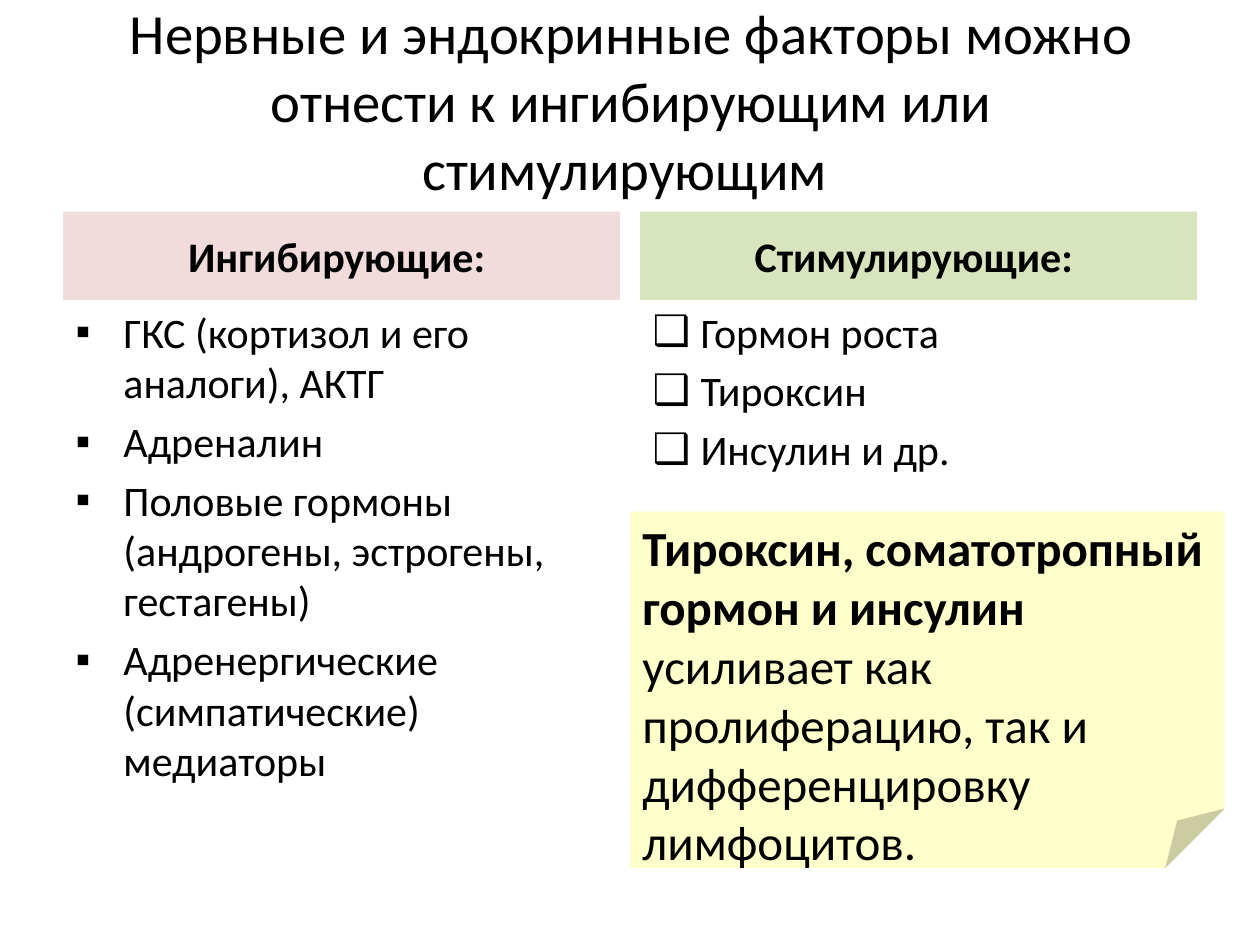
from dataclasses import dataclass

from lxml import etree
from pptx import Presentation
from pptx.dml.color import RGBColor
from pptx.enum.shapes import MSO_SHAPE
from pptx.enum.text import MSO_ANCHOR, MSO_AUTO_SIZE, PP_ALIGN
from pptx.oxml.ns import qn
from pptx.util import Inches, Pt

FOLDED_CORNER = MSO_SHAPE.FOLDED_CORNER
TOP, MIDDLE = MSO_ANCHOR.TOP, MSO_ANCHOR.MIDDLE
LEFT, CENTER = PP_ALIGN.LEFT, PP_ALIGN.CENTER
NO_FIT = MSO_AUTO_SIZE.NONE
COMPARISON_LAYOUT = 4


@dataclass(frozen=True)
class Theme:
    font: str = "Calibri"
    text: str = "000000"
    inhibiting: str = "F2DCDB"
    stimulating: str = "D7E4BD"
    note: str = "FFFFCC"
    title_size: float = 32.4
    body_size: float = 24
    note_size: float = 28


@dataclass(frozen=True)
class Column:
    left: float
    header_idx: int
    list_idx: int
    fill: str
    heading: str
    bullet: str
    items: tuple[str, ...]


THEME = Theme()
COLUMN_WIDTH, INDENT = 4.42, 0.38
HEADER_TOP, HEADER_HEIGHT, LIST_HEIGHT = 1.68, 0.7, 4.32
COLUMNS = (
    Column(0.5, 1, 2, THEME.inhibiting, "Ингибирующие: ", "▪", (
        "ГКС (кортизол и его аналоги), АКТГ",
        "Адреналин",
        "Половые гормоны (андрогены, эстрогены, гестагены)",
        "Адренергические (симпатические) медиаторы",
    )),
    Column(5.08, 3, 4, THEME.stimulating, "Стимулирующие: ", "❑", (
        "Гормон роста",
        "Тироксин",
        "Инсулин и др.",
    )),
)


def place(s, left: float, top: float, width: float, height: float) -> None:
    s.left, s.top = Inches(left), Inches(top)
    s.width, s.height = Inches(width), Inches(height)


def set_fill(s, color: str) -> None:
    s.fill.solid()
    s.fill.fore_color.rgb = RGBColor.from_string(color)


def setup_frame(s, anchor):
    tf = s.text_frame
    tf.word_wrap = True
    tf.auto_size = NO_FIT
    tf.vertical_anchor = anchor
    return tf


def add_text(p, text: str, *, size: float, bold: bool = False, align=LEFT) -> None:
    p.alignment = align
    r = p.add_run()
    r.text = text
    r.font.name = THEME.font
    r.font.size = Pt(size)
    r.font.bold = bold
    r.font.color.rgb = RGBColor.from_string(THEME.text)


def set_bullet(p, char: str) -> None:
    props = p._p.get_or_add_pPr()
    props.set("marL", str(Inches(INDENT)))
    props.set("indent", str(-Inches(INDENT)))
    etree.SubElement(props, qn("a:buChar")).set("char", char)


def draw_title(slide) -> None:
    s = slide.shapes.title
    place(s, 0.51, 0.44, 9, 1.25)
    tf = setup_frame(s, MIDDLE)
    tf.margin_bottom = Inches(0.59)
    add_text(tf.paragraphs[0],
             "Нервные и эндокринные факторы можно отнести к "
             "ингибирующим или стимулирующим ",
             size=THEME.title_size, align=CENTER)


def draw_column(slide, column: Column) -> None:
    header = slide.placeholders[column.header_idx]
    place(header, column.left, HEADER_TOP, COLUMN_WIDTH, HEADER_HEIGHT)
    set_fill(header, column.fill)
    tf = setup_frame(header, MIDDLE)
    add_text(tf.paragraphs[0], column.heading,
             size=THEME.body_size, bold=True, align=CENTER)

    body = slide.placeholders[column.list_idx]
    place(body, column.left, HEADER_TOP + HEADER_HEIGHT, COLUMN_WIDTH, LIST_HEIGHT)
    tf = setup_frame(body, TOP)
    for i, item in enumerate(column.items):
        p = tf.add_paragraph() if i else tf.paragraphs[0]
        add_text(p, item, size=THEME.body_size)
        set_bullet(p, column.bullet)


def draw_note(slide) -> None:
    s = slide.shapes.add_shape(FOLDED_CORNER, Inches(5), Inches(4.06),
                               Inches(4.72), Inches(2.83))
    s.shadow.inherit = False
    set_fill(s, THEME.note)
    s.line.fill.background()
    p = setup_frame(s, TOP).paragraphs[0]
    p.space_before = Pt(5.6)
    add_text(p, "Тироксин, соматотропный гормон и инсулин ",
             size=THEME.note_size, bold=True)
    add_text(p, "усиливает как пролиферацию, так и дифференцировку лимфоцитов.",
             size=THEME.note_size)


def main() -> None:
    prs = Presentation()
    prs.slide_width, prs.slide_height = Inches(10), Inches(7.5)
    slide = prs.slides.add_slide(prs.slide_layouts[COMPARISON_LAYOUT])
    draw_title(slide)
    for column in COLUMNS:
        draw_column(slide, column)
    draw_note(slide)
    prs.save("out.pptx")


if __name__ == "__main__":
    main()
